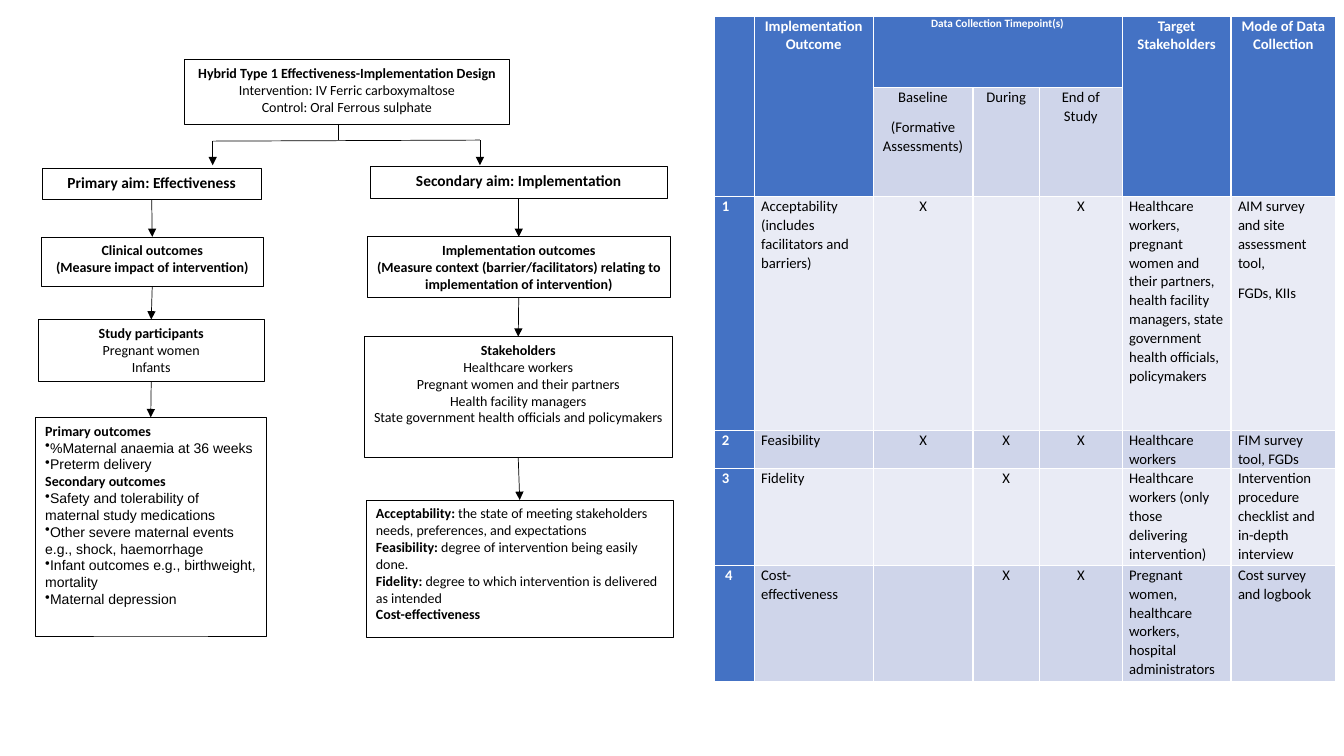
from pptx import Presentation
from pptx.dml.color import RGBColor
from pptx.enum.shapes import MSO_CONNECTOR, MSO_SHAPE
from pptx.enum.text import MSO_ANCHOR, PP_ALIGN
from pptx.oxml.ns import qn
from pptx.util import Inches, Pt

RECT = MSO_SHAPE.RECTANGLE
LINE = MSO_CONNECTOR.STRAIGHT
TOP = MSO_ANCHOR.TOP
LEFT, MID, JUST = PP_ALIGN.LEFT, PP_ALIGN.CENTER, PP_ALIGN.JUSTIFY


class Theme:
    ink = RGBColor(0, 0, 0)
    paper = RGBColor(255, 255, 255)
    blue = RGBColor(0x44, 0x72, 0xC4)
    bands = RGBColor(0xE9, 0xEB, 0xF5), RGBColor(0xCF, 0xD5, 0xEA)
    font, list_font = "Calibri", "Arial"
    body, aim, cell, small = 10, 11, 10.5, 8
    line = 0.5


# A box is (left, top, width, height), alignment, size, paragraphs.
# A paragraph is (bold part, plain part); "•" in front makes it a list item.
DESIGN = ((1.83, 0.59, 3.22, 0.64), MID, Theme.body, [
    ("Hybrid Type 1 Effectiveness-Implementation Design", ""),
    ("", "Intervention: IV Ferric carboxymaltose"),
    ("", "Control: Oral Ferrous sulphate")])

EFFECT = [
    ((0.42, 1.67, 2.17, 0.31), MID, Theme.aim, [
        ("Primary aim: Effectiveness", "")]),
    ((0.41, 2.35, 2.2, 0.49), MID, Theme.body, [
        ("Clinical outcomes", ""),
        ("(Measure impact of intervention)", "")]),
    ((0.38, 3.17, 2.24, 0.61), MID, Theme.body, [
        ("Study participants", ""),
        ("", "Pregnant women"),
        ("", "Infants")]),
    ((0.35, 4.14, 2.29, 2.17), LEFT, Theme.body, [
        ("Primary outcomes", ""),
        ("", "•%Maternal anaemia at 36 weeks"),
        ("", "•Preterm delivery"),
        ("Secondary outcomes", ""),
        ("", "•Safety and tolerability of maternal study medications"),
        ("", "•Other severe maternal events e.g., shock, haemorrhage"),
        ("", "•Infant outcomes e.g., birthweight, mortality"),
        ("", "•Maternal depression")]),
]

IMPLEMENT = [
    ((3.67, 1.65, 2.95, 0.32), MID, Theme.aim, [
        ("Secondary aim: Implementation", "")]),
    ((3.64, 2.35, 3.01, 0.6), MID, Theme.body, [
        ("Implementation outcomes", ""),
        ("(Measure context (barrier/facilitators) relating to "
         "implementation of intervention)", "")]),
    ((3.61, 3.34, 3.06, 1.2), MID, Theme.body, [
        ("Stakeholders", ""),
        ("", "Healthcare workers"),
        ("", "Pregnant women and their partners"),
        ("", "Health facility managers"),
        ("", "State government health officials and policymakers")]),
    ((3.63, 4.96, 3.05, 1.36), LEFT, Theme.body, [
        ("Acceptability:", " the state of meeting stakeholders needs, "
                           "preferences, and expectations"),
        ("Feasibility:", " degree of intervention being easily done."),
        ("Fidelity:", " degree to which intervention is delivered as intended"),
        ("Cost-effectiveness", "")]),
]

# Fork under the design box: start, end, arrowhead
FORK = [
    ((3.36, 1.23), (3.36, 1.39), False),
    ((2.11, 1.4), (4.76, 1.39), False),
    ((4.76, 1.39), (4.76, 1.64), True),
    ((2.11, 1.4), (2.11, 1.64), True),
]

PLACE = (7.09, 0.16)
WIDTHS = [0.39, 1.18, 0.99, 0.66, 0.82, 1.08, 1.04]
HEIGHTS = [0.71, 1.08, 2.32, 0.38, 0.96, 1.15]
MERGED = [(0, 0, 1, 0), (0, 1, 1, 1), (0, 2, 0, 4), (0, 5, 1, 5), (0, 6, 1, 6)]
ROWS = [
    ["", "Implementation Outcome", "Data Collection Timepoint(s)", "", "",
     "Target Stakeholders", "Mode of Data Collection"],
    ["", "", "Baseline\n(Formative Assessments)", "During", "End of Study", "", ""],
    ["1", "Acceptability (includes facilitators and barriers)", "X", "", "X",
     "Healthcare workers, pregnant women and their partners, health facility "
     "managers, state government health officials, policymakers",
     "AIM survey and site assessment tool,\nFGDs, KIIs"],
    ["2", "Feasibility", "X", "X", "X", "Healthcare workers",
     "FIM survey tool, FGDs"],
    ["3", "Fidelity", "", "X", "",
     "Healthcare workers (only those delivering intervention)",
     "Intervention procedure checklist and in-depth interview"],
    ["\N{NO-BREAK SPACE}4", "Cost-effectiveness", "", "X", "X",
     "Pregnant women, healthcare workers, hospital administrators",
     "Cost survey and logbook"],
]
TIMES = range(2, 5)


def style(font, size, color, bold, name=Theme.font):
    font.size, font.name, font.bold = Pt(size), name, bold
    font.color.rgb = color


def add_box(slide, data):
    area, align, size, paras = data
    box = slide.shapes.add_shape(RECT, *map(Inches, area))
    box.shadow.inherit = False
    box.fill.solid()
    box.fill.fore_color.rgb = Theme.paper
    box.line.color.rgb = Theme.ink
    box.line.width = Pt(Theme.line)
    frame = box.text_frame
    frame.word_wrap = True
    frame.vertical_anchor = TOP
    for i, (strong, plain) in enumerate(paras):
        para = frame.add_paragraph() if i else frame.paragraphs[0]
        para.alignment = align
        listed = plain.startswith("•")
        if listed:
            props = para._p.get_or_add_pPr()
            props.set("marL", "0")
            props.set("indent", "0")
            mark = props.makeelement(qn("a:buChar"), {"char": "•"})
            props.append(mark)
        name = Theme.list_font if listed else Theme.font
        style(para.font, size, Theme.ink, bool(strong), name)
        for text in (strong, plain.removeprefix("•")):
            if text:
                run = para.add_run()
                run.text = text
                if strong and plain:
                    run.font.bold = text == strong
    return box


def add_line(slide, start, end, arrow):
    link = slide.shapes.add_connector(LINE, *map(Inches, start + end))
    link.line.color.rgb = Theme.ink
    link.line.width = Pt(Theme.line)
    if arrow:
        edge = link.line._get_or_add_ln()
        edge.append(edge.makeelement(qn("a:tailEnd"), {"type": "triangle"}))
    props = link._element.spPr
    props.append(props.makeelement(qn("a:effectLst"), {}))
    return link


def add_chain(slide, items):
    """Stack of boxes, each joined to the next by an arrow."""
    boxes = [add_box(slide, item) for item in items]
    for upper, lower in zip(boxes, boxes[1:]):
        link = add_line(slide, (0, 0), (0, 0), True)
        link.begin_connect(upper, 2)
        link.end_connect(lower, 0)


def fill_cell(cell, text, row, col):
    head = row == 0 or col == 0 or (row == 1 and col not in TIMES)
    cell.fill.solid()
    cell.fill.fore_color.rgb = Theme.blue if head else Theme.bands[row % 2]
    cell.margin_left = cell.margin_right = Inches(0.07)
    cell.margin_top = cell.margin_bottom = 0
    cell.text = text
    if row < 2 or col in TIMES:
        align = MID
    else:
        align = LEFT if col else JUST
    size = Theme.small if (row, col) == (0, 2) else Theme.cell
    for para in cell.text_frame.paragraphs:
        para.alignment = align
        para.line_spacing = 1.06
        para.space_after = Pt(8)
        style(para.font, size, Theme.paper if head else Theme.ink, head)


def add_grid(slide):
    area = (*PLACE, sum(WIDTHS), sum(HEIGHTS))
    grid = slide.shapes.add_table(len(ROWS), len(WIDTHS), *map(Inches, area)).table
    grid.first_col = True
    for col, width in zip(grid.columns, WIDTHS):
        col.width = Inches(width)
    for row, height in zip(grid.rows, HEIGHTS):
        row.height = Inches(height)
    for r, texts in enumerate(ROWS):
        for c, text in enumerate(texts):
            fill_cell(grid.cell(r, c), text, r, c)
    for top, left, low, right in MERGED:
        grid.cell(top, left).merge(grid.cell(low, right))


def main():
    deck = Presentation()
    deck.slide_width, deck.slide_height = Inches(13.33), Inches(7.5)
    slide = deck.slides.add_slide(deck.slide_layouts[6])
    add_grid(slide)
    add_box(slide, DESIGN)
    for chain in (EFFECT, IMPLEMENT):
        add_chain(slide, chain)
    for start, end, arrow in FORK:
        add_line(slide, start, end, arrow)
    deck.save("out.pptx")


if __name__ == "__main__":
    main()
